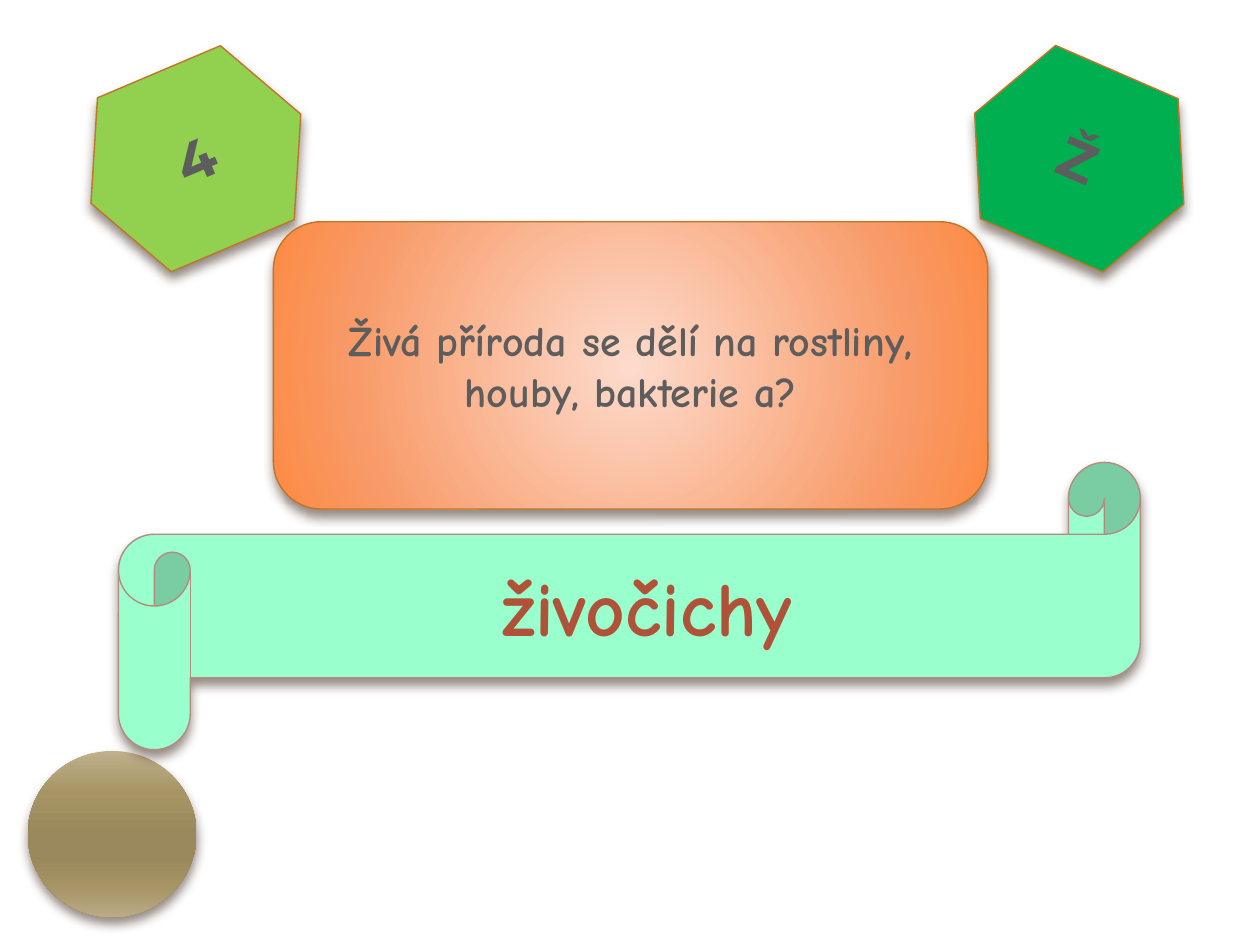
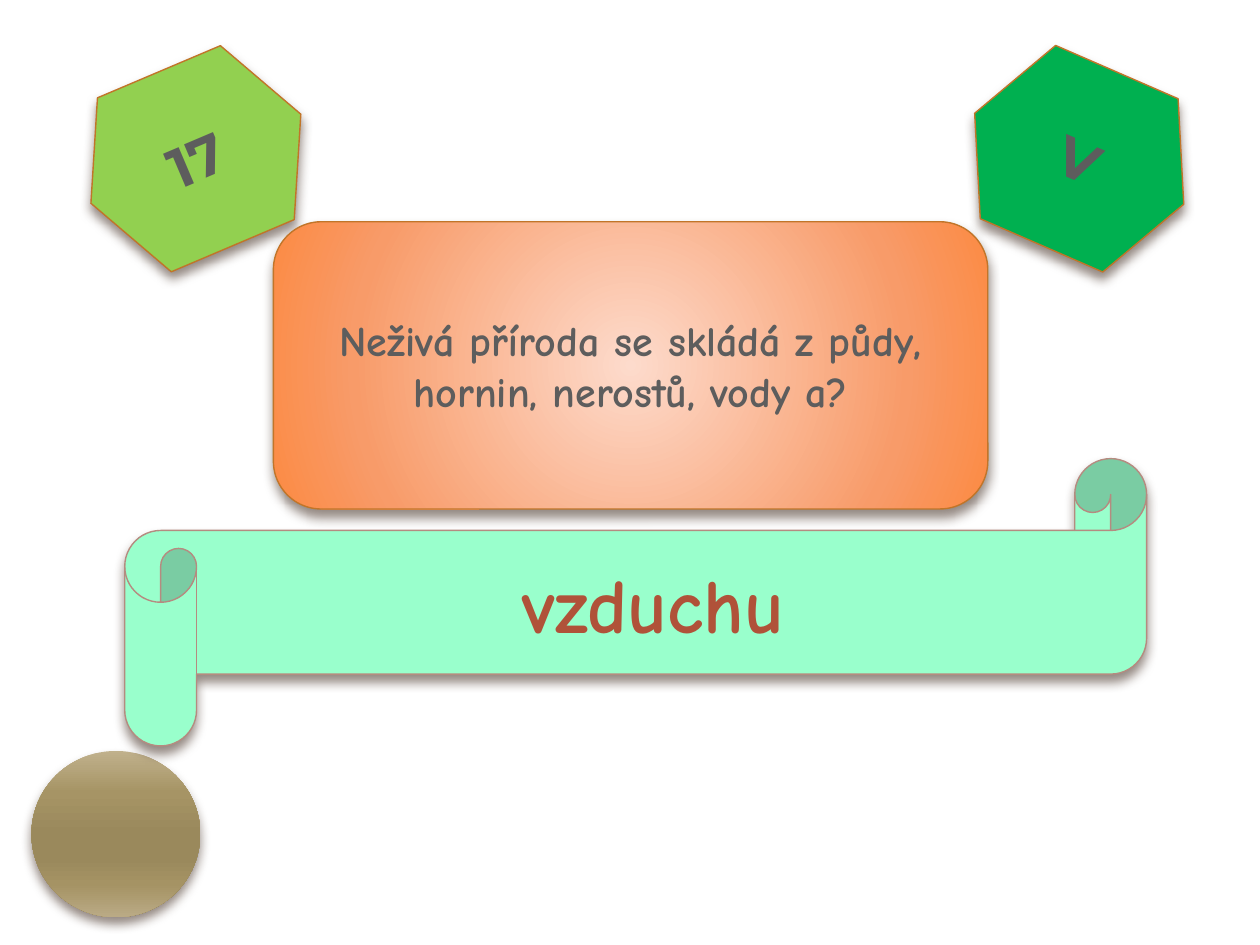
from lxml import etree
from pptx import Presentation, util as u
from pptx.dml.color import RGBColor
from pptx.enum import shapes, text
from pptx.oxml import parse_xml
from pptx.oxml.ns import nsdecls, qn

CARDS = [
    {"number": "4", "letter": "Ž",
     "question": "Živá příroda se dělí na rostliny, houby, bakterie a?",
     "answer": "živočichy", "scroll": (9.4, 36.7), "button": (2.2, 59.6)},
    {"number": "17", "letter": "V",
     "question": "Neživá příroda se skládá z půdy, hornin, nerostů, vody a?",
     "answer": "vzduchu", "scroll": (9.9, 36.4), "button": (2.5, 59.6)},
]

SLIDE_WIDTH, SLIDE_HEIGHT = u.Inches(10), u.Inches(7.5)
COLUMNS, ROWS = 100, 75
BADGE_SIZE = (18.1, 15)
QUESTION_SIZE = (56.7, 22.8)
SCROLL_SIZE = (81.1, 22.8)
BUTTON_SIZE = (13.4, 13.2)

THEME = {
    "letter_fill": "00B050",
    "number_fill": "92D050",
    "scroll_fill": "99FFCC",
    "question_fill": {"stops": [(0, "FDDBCC"), (72, "F89B69"), (100, "FC8A43")],
                      "round": True},
    "button_fill": {"stops": [(0, "C0B18C"), (25, "A69465"), (50, "9A895C"),
                              (65, "9A895C"), (80, "A59364"), (100, "BAAA85")],
                    "round": False},
    "edge": "C17529",
    "scroll_edge": "B58B80",
    "edge_width": u.Pt(0.79),
    "shadow": {"color": "4E3B30", "alpha": 60, "blur": u.Pt(6), "drop": u.Pt(4)},
    "badge_text": ("5D5D5D", {"name": "Montserrat", "size": u.Pt(32), "bold": True}),
    "question_text": ("5D5D5D", {"name": "Comic Neue", "size": u.Pt(24), "bold": True}),
    "answer_text": ("B05239", {"name": "Comic Neue", "size": u.Pt(44), "bold": True}),
}


def paint_gradient(part, gradient):
    stops = "".join(f'<a:gs pos="{share * 1000}"><a:srgbClr val="{color}"/></a:gs>'
                    for share, color in gradient["stops"])
    course = ('<a:path path="circle"><a:fillToRect l="50000" t="50000" r="50000" b="50000"/></a:path>'
              if gradient["round"] else '<a:lin ang="5400000" scaled="0"/>')
    part.fill.gradient()
    properties = part._element.spPr
    properties.replace(properties.find(qn("a:gradFill")), parse_xml(
        f'<a:gradFill {nsdecls("a")} rotWithShape="1"><a:gsLst>{stops}</a:gsLst>{course}</a:gradFill>'))


def cast_shadow(part):
    look = THEME["shadow"]
    part.shadow.inherit = False
    effects = part._element.spPr.find(qn("a:effectLst"))
    shadow = etree.SubElement(effects, qn("a:outerShdw"), blurRad=str(look["blur"]),
                              dist=str(look["drop"]), dir="5400000", rotWithShape="0")
    color = etree.SubElement(shadow, qn("a:srgbClr"), val=look["color"])
    etree.SubElement(color, qn("a:alpha"), val=str(look["alpha"] * 1000))


def write(part, words, style):
    color, formats = style
    part.text_frame.word_wrap = True
    part.text_frame.vertical_anchor = text.MSO_ANCHOR.MIDDLE
    line = part.text_frame.paragraphs[0]
    line.alignment = text.PP_ALIGN.CENTER
    run = line.add_run()
    run.text = words
    for name, value in formats.items():
        setattr(run.font, name, value)
    run.font.color.rgb = RGBColor.from_string(color)


def place(slide, outline, corner, size, fill, edge=None, turn=0, words=None, style=None):
    cells = (*corner, *size)
    units = (SLIDE_WIDTH / COLUMNS, SLIDE_HEIGHT / ROWS) * 2
    part = slide.shapes.add_shape(outline, *(round(c * unit) for c, unit in zip(cells, units)))
    part.rotation = turn
    if isinstance(fill, dict):
        paint_gradient(part, fill)
    else:
        part.fill.solid()
        part.fill.fore_color.rgb = RGBColor.from_string(fill)
    if edge:
        part.line.color.rgb = RGBColor.from_string(edge)
        part.line.width = THEME["edge_width"]
    else:
        part.line.fill.background()
    cast_shadow(part)
    if words:
        write(part, words, style)
    return part


def build_card(slide, card):
    outline = shapes.MSO_SHAPE
    for role, column, turn in (("letter", 76.6, 23.5), ("number", 6.5, 337)):
        place(slide, outline.HEXAGON, (column, 5.1), BADGE_SIZE, THEME[f"{role}_fill"],
              THEME["edge"], turn, card[role], THEME["badge_text"])
    place(slide, outline.ROUNDED_RECTANGLE, (21.7, 17.6), QUESTION_SIZE, THEME["question_fill"],
          THEME["edge"], words=card["question"], style=THEME["question_text"])
    place(slide, outline.OVAL, card["button"], BUTTON_SIZE, THEME["button_fill"])
    scroll = place(slide, outline.HORIZONTAL_SCROLL, card["scroll"], SCROLL_SIZE,
                   THEME["scroll_fill"], THEME["scroll_edge"],
                   words=card["answer"], style=THEME["answer_text"])
    scroll.adjustments[0] = 0.25


def main():
    deck = Presentation()
    deck.slide_width, deck.slide_height = SLIDE_WIDTH, SLIDE_HEIGHT
    for card in CARDS:
        build_card(deck.slides.add_slide(deck.slide_layouts[6]), card)
    deck.save("out.pptx")


if __name__ == "__main__":
    main()
